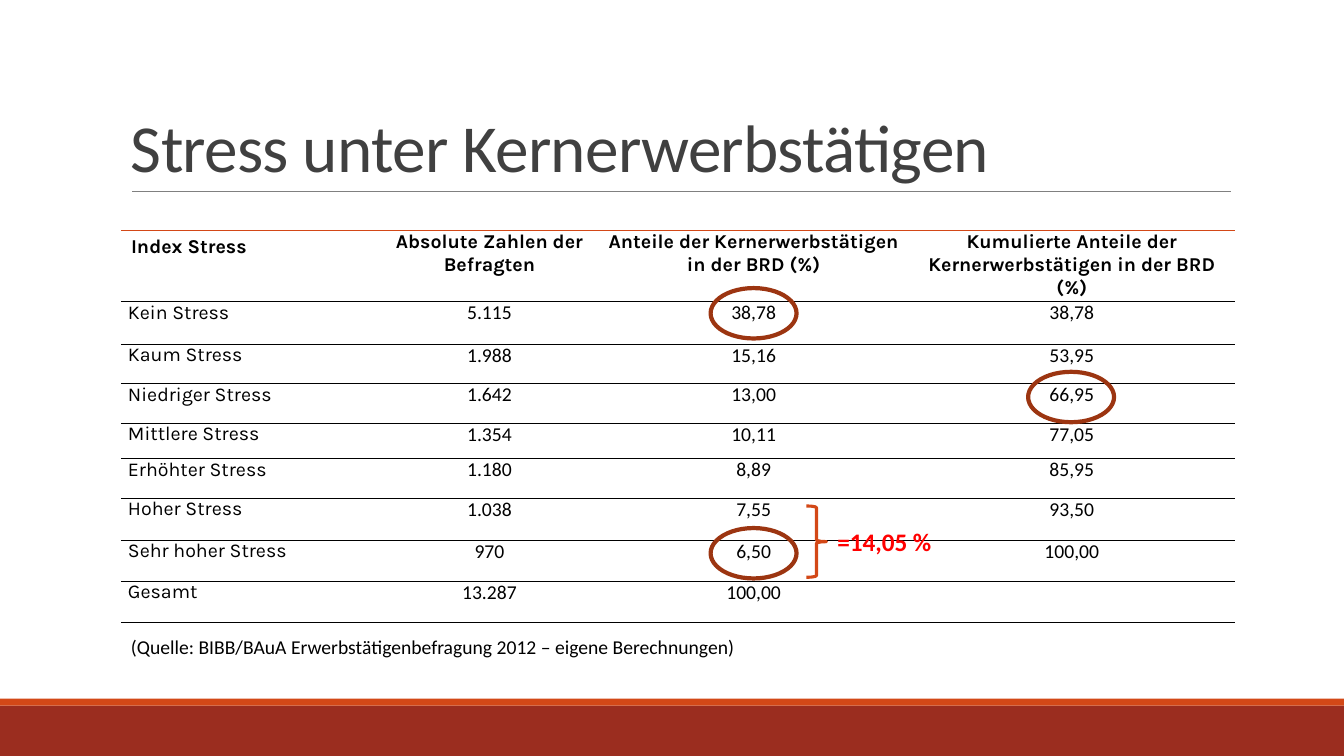
from lxml import etree
from pptx import Presentation
from pptx import util as u
from pptx.dml.color import RGBColor
from pptx.enum import shapes, text
from pptx.oxml.ns import qn

Pt = u.Pt
Kind = shapes.MSO_SHAPE
Align = text.PP_ALIGN
Anchor = text.MSO_ANCHOR

HEAD = ["Index Stress", "Absolute Zahlen der Befragten",
        "Anteile der Kernerwerbstätigen in der BRD (%)",
        "Kumulierte Anteile der Kernerwerbstätigen in der BRD (%)"]
ROWS = [
    ["Kein Stress", "5.115", "38,78", "38,78"],
    ["Kaum Stress", "1.988", "15,16", "53,95"],
    ["Niedriger Stress", "1.642", "13,00", "66,95"],
    ["Mittlere Stress", "1.354", "10,11", "77,05"],
    ["Erhöhter Stress", "1.180", "8,89", "85,95"],
    ["Hoher Stress", "1.038", "7,55", "93,50"],
    ["Sehr hoher Stress", "970", "6,50", "100,00"],
    ["Gesamt", "13.287", "100,00", ""],
]
WIDTHS = [185, 156.5, 221, 233.5]
HEIGHTS = [50.6, 30.5, 28, 28.5, 25.2, 28.4, 29.8, 29.4, 29.8]


def color(code):
    return RGBColor.from_string(code)


def assign(item, values):
    for name, value in values.items():
        setattr(item, name, value)


class Deck:
    black, orange, rust = "000000", "D34817", "9C3511"
    plain, accent = "Calibri", "Karla"

    def __init__(self, wide, high):
        self.show = Presentation()
        assign(self.show, {"slide_width": Pt(wide), "slide_height": Pt(high)})
        self.slide = self.show.slides.add_slide(self.show.slide_layouts[6])
        self.items = self.slide.shapes

    def words(self, frame, line, size=14, font=plain, ink=black, bold=False,
              align=Align.LEFT, gap=None, track=None):
        para = frame.paragraphs[0]
        assign(para, {"alignment": align, "line_spacing": gap})
        run = para.add_run()
        run.text = line
        assign(run.font, {"size": Pt(size), "name": font, "bold": bold})
        run.font.color.rgb = color(ink)
        if track:
            run._r.get_or_add_rPr().set("spc", str(track))

    def label(self, box, line, wrap=True, anchor=Anchor.TOP, **style):
        frame = self.items.add_textbox(*map(Pt, box)).text_frame
        assign(frame, {"word_wrap": wrap, "vertical_anchor": anchor})
        self.words(frame, line, **style)

    def shape(self, kind, box, fill=None, line=None, weight=1):
        item = self.items.add_shape(kind, *map(Pt, box))
        item.shadow.inherit = False
        if fill:
            item.fill.solid()
            item.fill.fore_color.rgb = color(fill)
        else:
            item.fill.background()
        if line:
            item.line.color.rgb = color(line)
            item.line.width = Pt(weight)
        else:
            item.line.fill.background()

    def rule(self, left, right, top, ink, weight):
        item = self.items.add_connector(
            shapes.MSO_CONNECTOR.STRAIGHT, Pt(left), Pt(top), Pt(right), Pt(top))
        item.line.color.rgb = color(ink)
        item.line.width = Pt(weight)
        etree.SubElement(item._element.spPr, qn("a:effectLst"))

    def border(self, cell, top, bottom):
        props = cell._tc.get_or_add_tcPr()
        for side, line in {"L": None, "R": None, "T": top, "B": bottom}.items():
            edge = etree.SubElement(props, qn("a:ln" + side))
            if line:
                ink, weight = line
                edge.set("w", str(int(Pt(weight))))
                fill = etree.SubElement(edge, qn("a:solidFill"))
                etree.SubElement(fill, qn("a:srgbClr")).set("val", ink)
            else:
                edge.set("w", "0")
                etree.SubElement(edge, qn("a:noFill"))

    def table(self, left, top, rows, widths, heights):
        grid = self.items.add_table(
            len(rows), len(widths), Pt(left), Pt(top),
            Pt(sum(widths)), Pt(sum(heights))).table
        assign(grid, {"first_row": False, "horz_banding": False})
        for col, width in zip(grid.columns, widths):
            col.width = Pt(width)
        for row, height in zip(grid.rows, heights):
            row.height = Pt(height)
        thin = (self.black, 0.25)
        for r, row in enumerate(rows):
            for c, entry in enumerate(row):
                cell = grid.cell(r, c)
                corner = r == 0 and c == 0
                side, edge = (7.2, 3.6) if corner else (5, 0)
                assign(cell, {"margin_left": Pt(side), "margin_right": Pt(side),
                              "margin_top": Pt(edge), "margin_bottom": Pt(edge)})
                self.border(cell, thin if r else (self.orange, 1), thin)
                cell.fill.background()
                if entry:
                    self.words(cell.text_frame, entry, bold=r == 0,
                               font=self.plain if r and c else self.accent,
                               align=Align.CENTER if c else Align.LEFT)


def main():
    deck = Deck(960, 540)

    # Footer bands and title
    deck.shape(Kind.RECTANGLE, (0, 504, 960, 36), fill="9B2D1F")
    deck.shape(Kind.RECTANGLE, (0, 499, 960, 5), fill=deck.orange)
    deck.rule(94.5, 879, 136.8, "808080", 0.5)
    deck.label((86.4, 22.4, 792, 114.2), "Stress unter Kernerwerbstätigen",
               anchor=Anchor.BOTTOM, size=48, ink="404040", gap=0.85, track=-50)

    # Stress index table
    deck.table(86.4, 164.6, [HEAD] + ROWS, WIDTHS, HEIGHTS)

    # Highlighted shares
    for left, top in [(507.6, 377.2), (507.6, 205.8), (734.4, 265.6)]:
        deck.shape(Kind.OVAL, (left, top, 61.4, 36), line=deck.rust, weight=3)

    # Sum of the two highest levels
    deck.shape(Kind.RIGHT_BRACE, (576, 361.4, 14.4, 51), line=deck.orange, weight=2.25)
    deck.label((591, 372.4, 97, 29), "=14,05 %", size=18, ink="FF0000", bold=True)

    # Source
    deck.label((86.4, 450, 450, 46),
               "(Quelle: BIBB/BAuA Erwerbstätigenbefragung 2012 – eigene Berechnungen)",
               wrap=False, align=Align.JUSTIFY)

    deck.show.save("out.pptx")


if __name__ == "__main__":
    main()
